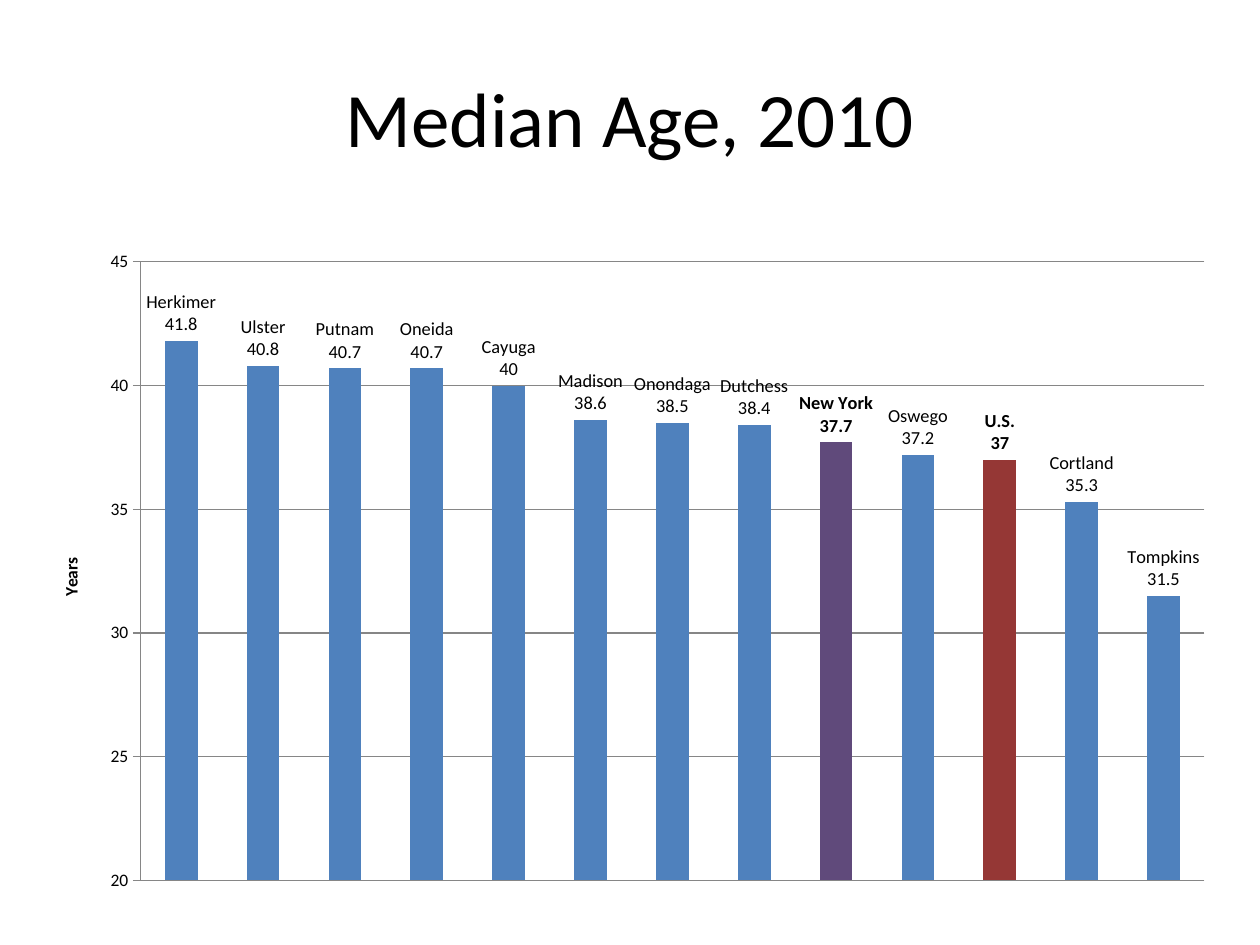
import pptx
import pptx.chart.data
import pptx.dml.color
import pptx.enum.chart
import pptx.enum.text
import pptx.oxml
import pptx.oxml.ns
import pptx.util
from dataclasses import dataclass

Pt = pptx.util.Pt
qn = pptx.oxml.ns.qn
RGB = pptx.dml.color.RGBColor.from_string


@dataclass(frozen=True)
class Theme:
    font: str = "Calibri"
    text: RGB = RGB("000000")
    grid: RGB = RGB("868686")
    county: RGB = RGB("4F81BD")
    state: RGB = RGB("604A7B")
    nation: RGB = RGB("953735")
    title_size: int = 44
    axis_size: int = 10
    label_size: float = 10.5


def set_layout(parent, index, **values):
    for old in parent.findall(qn("c:layout")):
        parent.remove(old)
    items = "".join(f'<c:{k} val="{v}"/>' for k, v in values.items())
    parent.insert(index, pptx.oxml.parse_xml(
        f'<c:layout {pptx.oxml.ns.nsdecls("c")}><c:manualLayout>{items}</c:manualLayout></c:layout>'))


def style_font(font, size, bold=False):
    font.name = theme.font
    font.size = Pt(size)
    font.bold = bold
    font.color.rgb = theme.text


theme = Theme()
ages = {
    "Herkimer": 41.8, "Ulster": 40.8, "Putnam": 40.7, "Oneida": 40.7, "Cayuga": 40,
    "Madison": 38.6, "Onondaga": 38.5, "Dutchess": 38.4, "New York": 37.7,
    "Oswego": 37.2, "U.S.": 37, "Cortland": 35.3, "Tompkins": 31.5,
}
highlights = {"New York": theme.state, "U.S.": theme.nation}

prs = pptx.Presentation()
prs.slide_width, prs.slide_height = Pt(720), Pt(540)
s = prs.slides.add_slide(prs.slide_layouts[5])

title = s.shapes.title
title.left, title.top, title.width, title.height = Pt(36), Pt(21.6), Pt(648), Pt(90)
tf = title.text_frame
tf.text = "Median Age, 2010"
tf.vertical_anchor = pptx.enum.text.MSO_ANCHOR.MIDDLE
p = tf.paragraphs[0]
p.alignment = pptx.enum.text.PP_ALIGN.CENTER
style_font(p.font, theme.title_size)

data = pptx.chart.data.CategoryChartData()
data.categories = list(ages)
data.add_series("Series 1", list(ages.values()))
chart = s.shapes.add_chart(
    pptx.enum.chart.XL_CHART_TYPE.COLUMN_CLUSTERED,
    Pt(18.72), Pt(138.24), Pt(683.28), Pt(380.16), data).chart
chart.has_legend = False
chart.has_title = False
style_font(chart.font, theme.axis_size)
chart.category_axis.visible = False

axis = chart.value_axis
axis.minimum_scale, axis.maximum_scale, axis.major_unit = 20, 45, 5
axis.major_tick_mark = pptx.enum.chart.XL_TICK_MARK.CROSS
axis.minor_tick_mark = pptx.enum.chart.XL_TICK_MARK.NONE
axis.has_major_gridlines = True
for line in (axis.format.line, axis.major_gridlines.format.line):
    line.color.rgb = theme.grid
    line.width = Pt(0.75)
tf = axis.axis_title.text_frame
tf.text = "Years"
style_font(tf.paragraphs[0].font, theme.axis_size, bold=True)
set_layout(axis.axis_title._element, 1, xMode="edge", yMode="edge", x=0.02, y=0.47)
set_layout(chart._chartSpace.chart.plotArea, 0, layoutTarget="inner",
           xMode="edge", yMode="edge", x=0.09, y=0.03, w=0.89, h=0.93)

plot = chart.plots[0]
plot.gap_width = 150
plot.vary_by_categories = False
series = plot.series[0]
series.format.fill.solid()
series.format.fill.fore_color.rgb = theme.county
labels = series.data_labels
labels.position = pptx.enum.chart.XL_LABEL_POSITION.OUTSIDE_END
style_font(labels.font, theme.label_size)

for i, name in enumerate(ages):
    if name in highlights:
        point = series.points[i]
        point.format.fill.solid()
        point.format.fill.fore_color.rgb = highlights[name]
        style_font(point.data_label.font, theme.label_size, bold=True)
        point.data_label.position = pptx.enum.chart.XL_LABEL_POSITION.OUTSIDE_END

for label in [labels._element, *labels._element.findall(qn("c:dLbl"))]:
    for tag in ("c:showVal", "c:showCatName"):
        label.find(qn(tag)).set("val", "1")
    separator = pptx.oxml.parse_xml(
        f'<c:separator {pptx.oxml.ns.nsdecls("c")}>\n</c:separator>')
    label.find(qn("c:showBubbleSize")).addnext(separator)
    separator.text = "\n"

prs.save("out.pptx")
